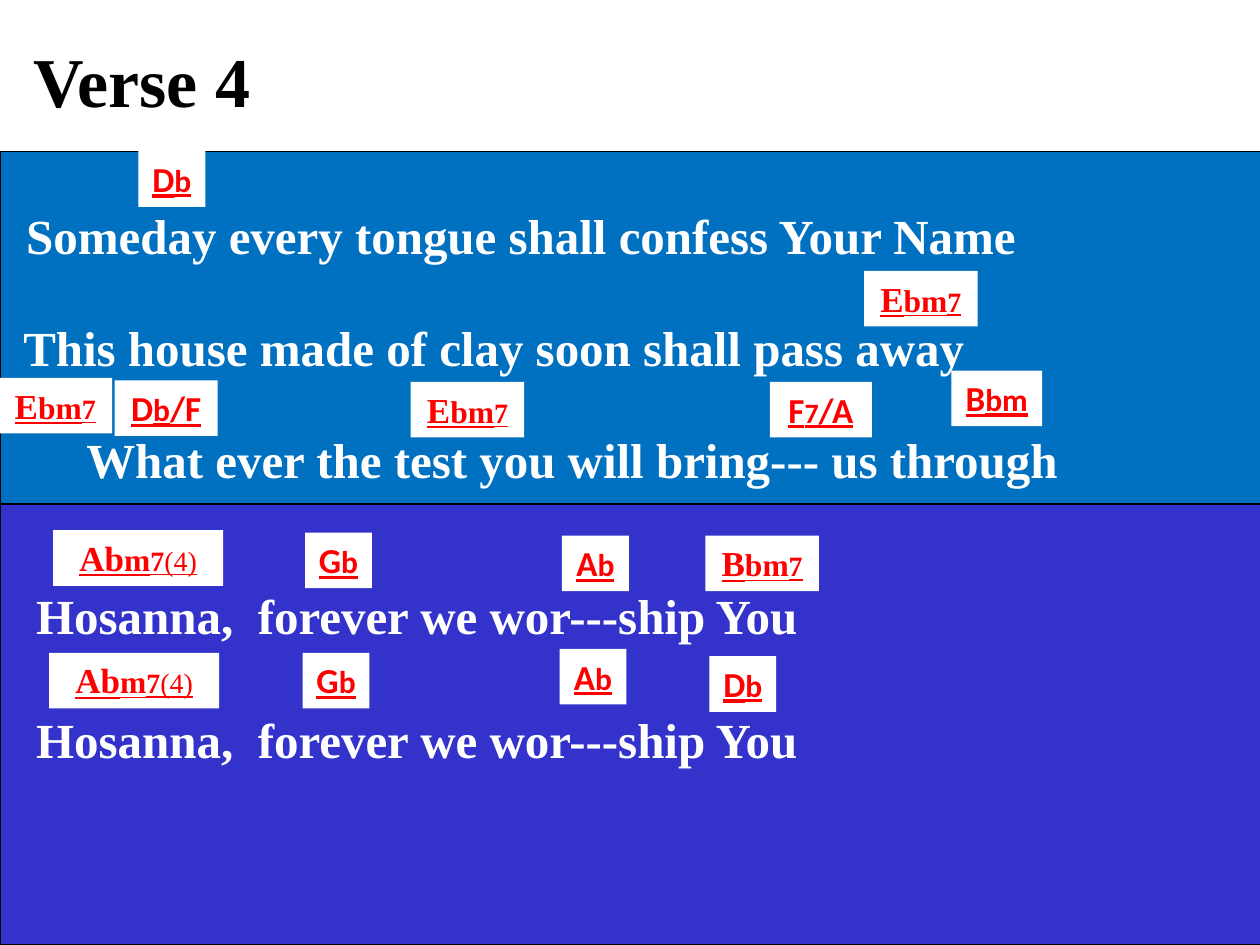
from pptx import Presentation
from pptx.dml.color import RGBColor
from pptx.enum.shapes import MSO_SHAPE
from pptx.enum.text import MSO_ANCHOR, PP_ALIGN
from pptx.util import Cm, Pt

RECT = MSO_SHAPE.RECTANGLE
TOP = MSO_ANCHOR.TOP
LEFT, CENTER = PP_ALIGN.LEFT, PP_ALIGN.CENTER
SERIF, SANS = "Times New Roman", "Calibri"
COLORS = {"verse": "0070C0", "chorus": "3333CC", "paper": "FFFFFF",
          "ink": "000000", "chord": "FF0000"}
CHORD_H = 1.12
LYRIC_H = 1.45
LYRIC = {"name": SERIF, "size": Pt(28), "bold": True}
TITLE = {"name": SERIF, "size": Pt(40), "bold": True}
CHORDS = {
    "Db": (1.35, SANS, [("D", 20), ("b", 18)]),
    "Gb": (1.35, SANS, [("G", 20), ("b", 18)]),
    "Ab": (1.35, SANS, [("A", 20), ("b", 18)]),
    "Bbm": (1.83, SANS, [("B", 20), ("bm", 18)]),
    "Db/F": (2.08, SANS, [("D", 20), ("b", 18), ("/F", 20)]),
    "F7/A": (2.06, SANS, [("F", 20), ("7", 16), ("/A", 20)]),
    "Ebm7": (2.29, SERIF, [("E", 20), ("bm", 18), ("7", 16)]),
    "Bbm7": (2.29, SERIF, [("B", 20), ("bm", 18), ("7", 16)]),
    "Abm7(4)": (3.43, SERIF, [("Ab", 20), ("m", 18), ("7", 16), ("(4)", 16)]),
}
VERSE_LINES = [
    (0.53, "Someday every tongue shall confess Your Name"),
    (0.47, "This house made of clay soon shall pass away"),
    (1.74, "What ever the test you will bring--- us through"),
]
VERSE_CHORDS = [
    ("Db", 2.79, 0), ("Ebm7", 17.42, 2.41), ("Ebm7", -0.03, 4.57),
    ("Db/F", 2.31, 4.62), ("Ebm7", 8.28, 4.65), ("F7/A", 15.52, 4.65),
    ("Bbm", 19.18, 4.42),
]
CHORUS_LINES = [(0.73, "Hosanna,  forever we wor---ship You")] * 2
CHORUS_CHORDS = [
    ("Abm7(4)", 1.07, 0.53), ("Gb", 6.15, 0.58),
    ("Ab", 11.33, 0.64), ("Bbm7", 14.22, 0.64),
    ("Abm7(4)", 0.99, 3), ("Gb", 6.1, 3),
    ("Ab", 11.28, 2.92), ("Db", 14.3, 3.07),
]


def rgb(key):
    return RGBColor.from_string(COLORS[key])


def add_box(slide, box, fill, line=None):
    sp = slide.shapes.add_shape(RECT, *map(Cm, box))
    sp.shadow.inherit = False
    sp.fill.solid()
    sp.fill.fore_color.rgb = rgb(fill)
    if line:
        sp.line.color.rgb = rgb(line)
        sp.line.width = Pt(0.75)
    else:
        sp.line.fill.background()
    return sp


def write(sp, runs, color, align=LEFT, wrap=True):
    tf = sp.text_frame
    tf.word_wrap = wrap
    tf.vertical_anchor = TOP
    p = tf.paragraphs[0]
    p.alignment = align
    for text, fmt in runs:
        r = p.add_run()
        r.text = text
        for key, value in fmt.items():
            setattr(r.font, key, value)
        r.font.color.rgb = rgb(color)


def add_title(slide, box, text):
    write(add_box(slide, box, "paper"), [(text, TITLE)], "ink")


def add_lyric(slide, box, indent, text):
    sp = slide.shapes.add_textbox(*map(Cm, box))
    write(sp, [(text, LYRIC)], "paper")
    sp.text_frame.margin_left = Cm(indent)


def add_chord(slide, left, top, name):
    width, font, parts = CHORDS[name]
    runs = [(text, {"name": font, "size": Pt(size), "underline": True,
                    "bold": text != "(4)"}) for text, size in parts]
    sp = add_box(slide, (left, top, width, CHORD_H), "paper")
    write(sp, runs, "chord", CENTER, False)


def add_section(slide, box, fill, first, pitch, lines, chords):
    left, top, width, height = box
    add_box(slide, box, fill, "ink")
    for i, (indent, text) in enumerate(lines):
        line_box = (left, top + first + i * pitch, width, LYRIC_H)
        add_lyric(slide, line_box, indent, text)
    for name, dx, dy in chords:
        add_chord(slide, left + dx, top + dy, name)


def main():
    prs = Presentation()
    prs.slide_width, prs.slide_height = Cm(25.4), Cm(19.05)
    slide = prs.slides.add_slide(prs.slide_layouts[6])
    add_section(slide, (0, 3.05, 25.45, 7.11), "verse", 0.96, 2.26,
                VERSE_LINES, VERSE_CHORDS)
    add_section(slide, (0, 10.16, 25.45, 8.89), "chorus", 1.52, 2.49,
                CHORUS_LINES, CHORUS_CHORDS)
    add_title(slide, (0.43, 0.64, 8.46, 1.96), "Verse 4")
    prs.save("out.pptx")


if __name__ == "__main__":
    main()
